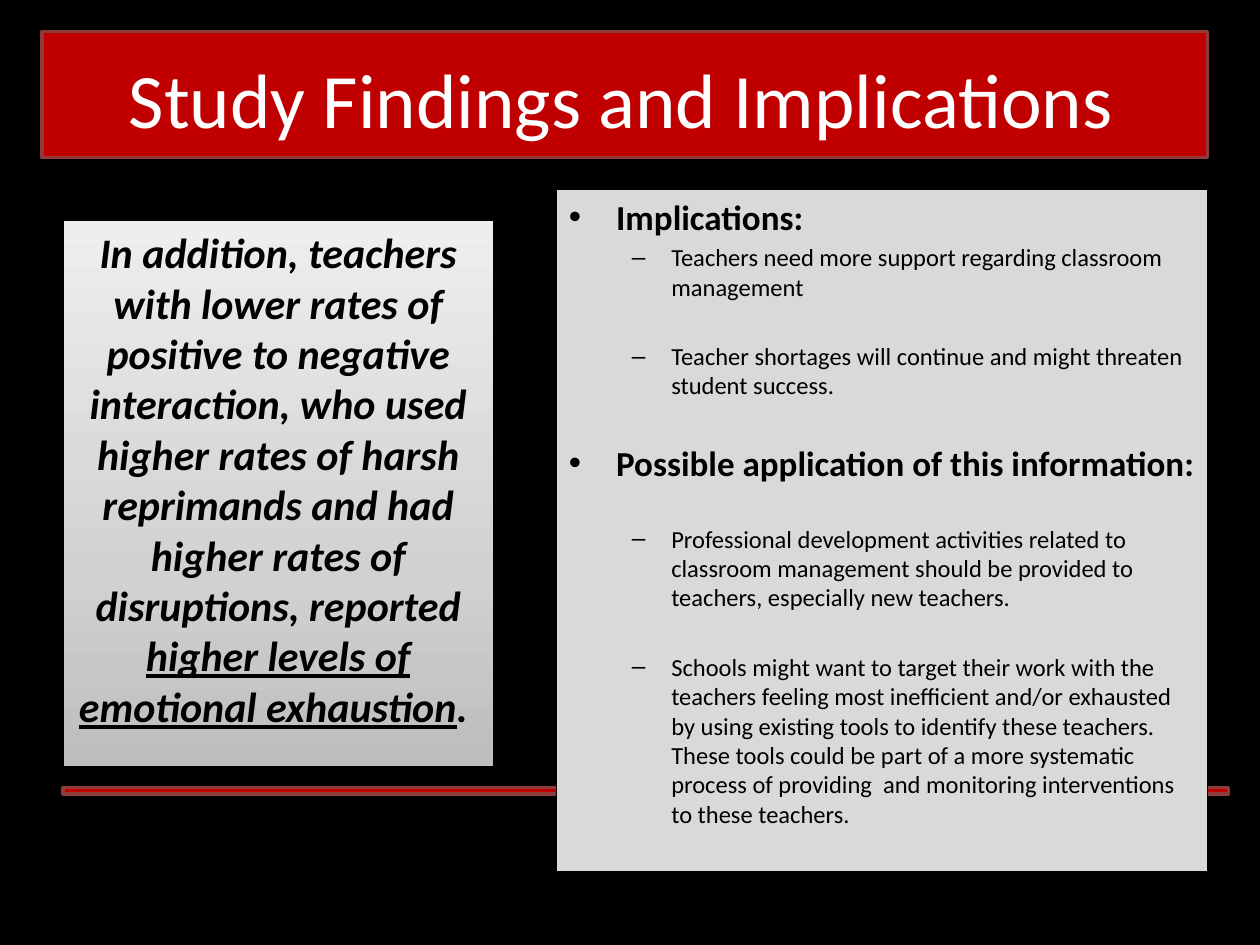
from copy import deepcopy
from dataclasses import dataclass

from lxml import etree
from pptx import Presentation
from pptx.dml.color import RGBColor
from pptx.enum import shapes, text
from pptx.oxml.ns import qn
from pptx.util import Pt


@dataclass(frozen=True)
class Theme:
    font: str = "Calibri"
    black: str = "000000"
    white: str = "FFFFFF"
    red: str = "C00000"
    red_edge: str = "8E3B39"
    panel: str = "D9D9D9"
    finding_stops: tuple = ((0, "BDBDBD"), (0.35, "D1D1D1"), (1, "EEEEEE"))
    title_size: int = 44
    finding_size: int = 24
    heading_size: int = 20
    item_size: int = 14


THEME = Theme()
SPACING = 0.2  # space before a paragraph, as a share of its type size
GAP = 20       # extra space that sets groups apart

FINDING = (
    ("In addition, teachers with lower rates of positive to negative interaction, "
     "who used higher rates of harsh reprimands and had higher rates of "
     "disruptions, reported ", False),
    ("higher levels of emotional exhaustion", True),
    (". ", False),
)

# heading, space before it, space before its first item, items
SECTIONS = (
    ("Implications:", 0, 0, (
        "Teachers need more support regarding classroom management",
        "Teacher shortages will continue and might threaten student success.",
    )),
    ("Possible application of this information:", GAP, GAP, (
        "Professional development activities related to classroom management "
        "should be provided to teachers, especially new teachers.",
        "Schools might want to target their work with the teachers feeling most "
        "inefficient and/or exhausted by using existing tools to identify these "
        "teachers. These tools could be part of a more systematic process of "
        "providing  and monitoring interventions to these teachers.",
    )),
)


def add_rectangle(slide, place, fill, edge, edge_width):
    box = slide.shapes.add_shape(shapes.MSO_SHAPE.RECTANGLE, *map(Pt, place))
    box.shadow.inherit = False
    box.fill.solid()
    box.fill.fore_color.rgb = RGBColor.from_string(fill)
    box.line.color.rgb = RGBColor.from_string(edge)
    box.line.width = Pt(edge_width)
    box.text_frame.word_wrap = True
    box.text_frame.vertical_anchor = text.MSO_ANCHOR.TOP
    return box


def fill_upward(box, stops):
    """Fill with a gradient that runs from the bottom edge to the top."""
    box.fill.gradient()
    box.fill.gradient_angle = 90
    stop_list = box.fill._fill._gradFill.find(qn("a:gsLst"))
    stop_list.insert(1, deepcopy(stop_list[0]))
    for stop, (position, color) in zip(box.fill.gradient_stops, stops):
        stop.position = position
        stop.color.rgb = RGBColor.from_string(color)


def add_span(para, words, size, color=THEME.black, **style):
    span = para.add_run()
    span.text = words
    span.font.name = THEME.font
    span.font.size = Pt(size)
    span.font.color.rgb = RGBColor.from_string(color)
    for name, value in style.items():
        setattr(span.font, name, value)


def add_bullet(para, mark, indent, hang):
    props = para._p.get_or_add_pPr()
    props.set("marL", str(Pt(indent)))
    props.set("indent", str(-Pt(hang)))
    etree.SubElement(props, qn("a:buFont")).set("typeface", "Arial")
    etree.SubElement(props, qn("a:buChar")).set("char", mark)


def add_outline_line(frame, words, level, gap):
    """Add a heading (level 0) or an item (level 1) to the panel."""
    first = not frame.paragraphs[0].runs
    para = frame.paragraphs[0] if first else frame.add_paragraph()
    size = (THEME.heading_size, THEME.item_size)[level]
    para.level = level
    para.alignment = text.PP_ALIGN.LEFT
    para.space_before = Pt(0 if first else size * SPACING + gap)
    add_bullet(para, *(("•", 27, 27), ("–", 58.5, 22.5))[level])
    add_span(para, words, size, bold=level == 0)


def add_title(slide):
    add_rectangle(slide, (24, 18, 666, 72), THEME.red, THEME.red_edge, 2)
    box = slide.shapes.add_textbox(*map(Pt, (36, 21.6, 648, 68.4)))
    box.text_frame.word_wrap = True
    box.text_frame.vertical_anchor = text.MSO_ANCHOR.MIDDLE
    para = box.text_frame.paragraphs[0]
    para.alignment = text.PP_ALIGN.CENTER
    add_span(para, "Study Findings and Implications ", THEME.title_size, THEME.white)


def add_finding(slide):
    box = add_rectangle(slide, (36, 126, 246, 312), THEME.panel, THEME.black, 0.75)
    fill_upward(box, THEME.finding_stops)
    para = box.text_frame.paragraphs[0]
    para.alignment = text.PP_ALIGN.CENTER
    for words, underlined in FINDING:
        add_span(para, words, THEME.finding_size,
                 bold=True, italic=True, underline=underlined)


def add_implications(slide):
    box = add_rectangle(slide, (318, 108, 372, 390), THEME.panel, THEME.black, 0.75)
    for heading, heading_gap, first_gap, items in SECTIONS:
        add_outline_line(box.text_frame, heading, 0, heading_gap)
        for number, item in enumerate(items):
            add_outline_line(box.text_frame, item, 1, GAP if number else first_gap)


def main():
    deck = Presentation()
    deck.slide_width, deck.slide_height = Pt(720), Pt(540)
    slide = deck.slides.add_slide(deck.slide_layouts[6])
    slide.background.fill.solid()
    slide.background.fill.fore_color.rgb = RGBColor.from_string(THEME.black)
    add_rectangle(slide, (36, 450, 666, 3.6), THEME.red, THEME.red_edge, 2)
    add_finding(slide)
    add_implications(slide)
    add_title(slide)
    deck.save("out.pptx")


if __name__ == "__main__":
    main()
